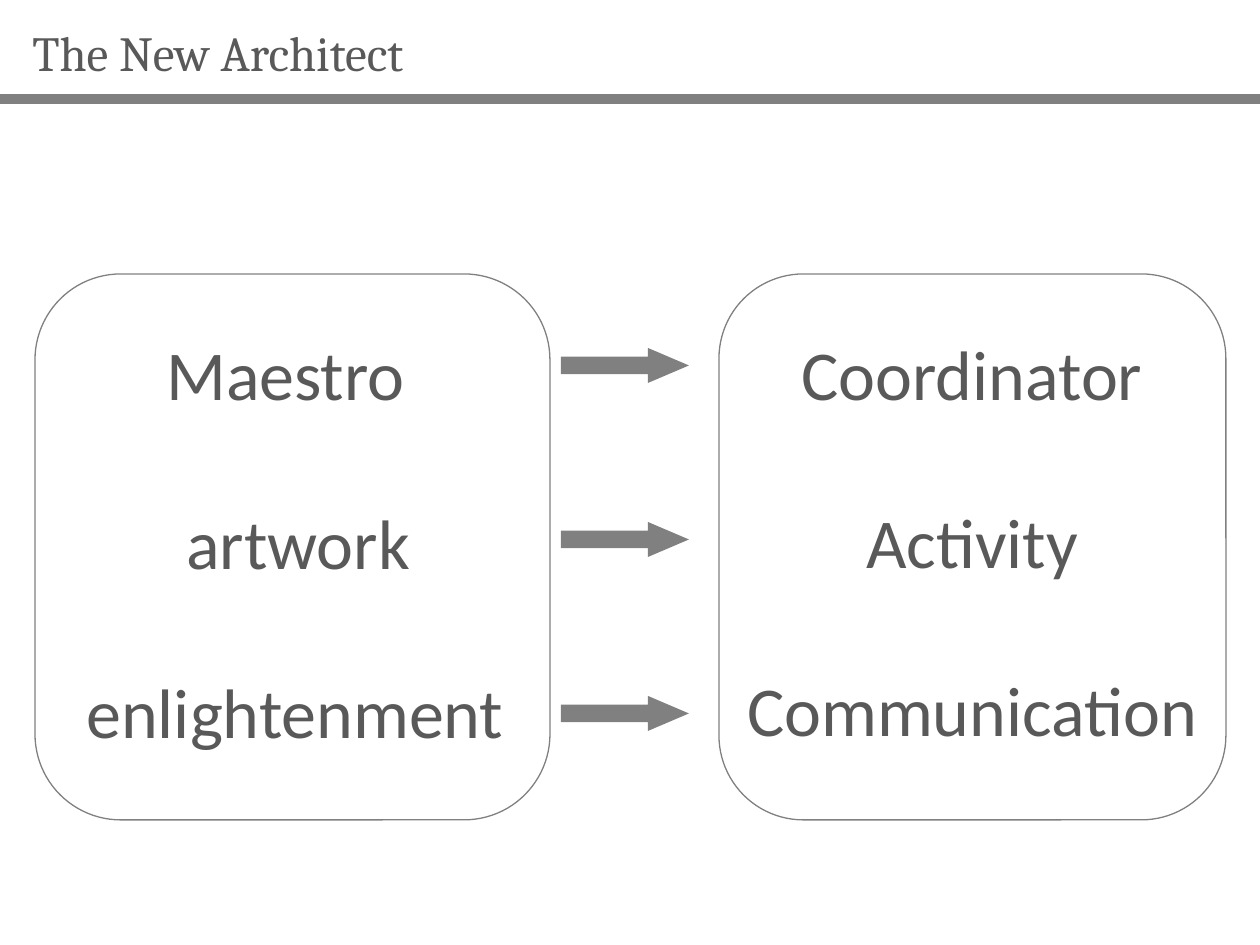
from pptx import Presentation
from pptx.dml.color import RGBColor
from pptx.enum.shapes import MSO_SHAPE as Kind
from pptx.enum.text import MSO_AUTO_SIZE as Fit, PP_ALIGN as Align
from pptx.util import Pt

PX = 914400 // 126
INK, GRAY = "595959", "808080"

TITLE = "The New Architect"
OLD = [("Maestro", 154, 266), ("artwork", 174, 252), ("enlightenment", 74, 446)]
NEW = ["Coordinator", "Activity", "Communication"]
FRAMES = [(35, 515), (719, 507)]  # left, width
TEXT_TOP, TEXT_STEP = 324, 169
ARROW_TOP, ARROW_STEP = 348, 174


def color(code):
    return RGBColor.from_string(code)


def scale(box):
    return [n * PX for n in box]


def add_text(slide, box, lines, size, font, align=Align.LEFT, wrap=True, gap=0):
    """Add a text box; gap is the space in points between its paragraphs."""
    frame = slide.shapes.add_textbox(*scale(box)).text_frame
    frame.word_wrap = wrap
    frame.auto_size = Fit.SHAPE_TO_FIT_TEXT
    frame.text = "\n".join(lines)
    for i, para in enumerate(frame.paragraphs):
        para.alignment = align
        para.space_before = Pt(gap if i else 0)
        for run in para.runs:
            run.font.size = Pt(size)
            run.font.name = font
            run.font.color.rgb = color(INK)


def add_shape(slide, kind, box, fill=None, line=None, width=0.75):
    shape = slide.shapes.add_shape(kind, *scale(box))
    shape.shadow.inherit = False
    if fill:
        shape.fill.solid()
        shape.fill.fore_color.rgb = color(fill)
    else:
        shape.fill.background()
    if line:
        shape.line.color.rgb = color(line)
        shape.line.width = Pt(width)
    else:
        shape.line.fill.background()
    return shape


def main():
    deck = Presentation()
    deck.slide_width, deck.slide_height = scale((1260, 945))
    slide = deck.slides.add_slide(deck.slide_layouts[6])

    for i, (word, left, width) in enumerate(OLD):
        box = (left, TEXT_TOP + i * TEXT_STEP, width, 97)
        add_text(slide, box, [word], 40, "Calibri", wrap=False)
    add_text(slide, (729, TEXT_TOP, 486, 437), NEW, 40, "Calibri",
             Align.CENTER, gap=48)

    for i in range(len(NEW)):
        box = (561, ARROW_TOP + i * ARROW_STEP, 128, 35)
        arrow = add_shape(slide, Kind.RIGHT_ARROW, box, fill=GRAY)
        arrow.adjustments[0] = 0.5
        arrow.adjustments[1] = 1.17

    for left, width in FRAMES:
        add_shape(slide, Kind.ROUNDED_RECTANGLE, (left, 274, width, 546), line=GRAY)

    add_text(slide, (20, 16, 937, 72), [TITLE], 28, "Cambria")
    add_shape(slide, Kind.RECTANGLE, (-15, 96, 1290, 6), GRAY, GRAY, 2)
    deck.save("out.pptx")


if __name__ == "__main__":
    main()
